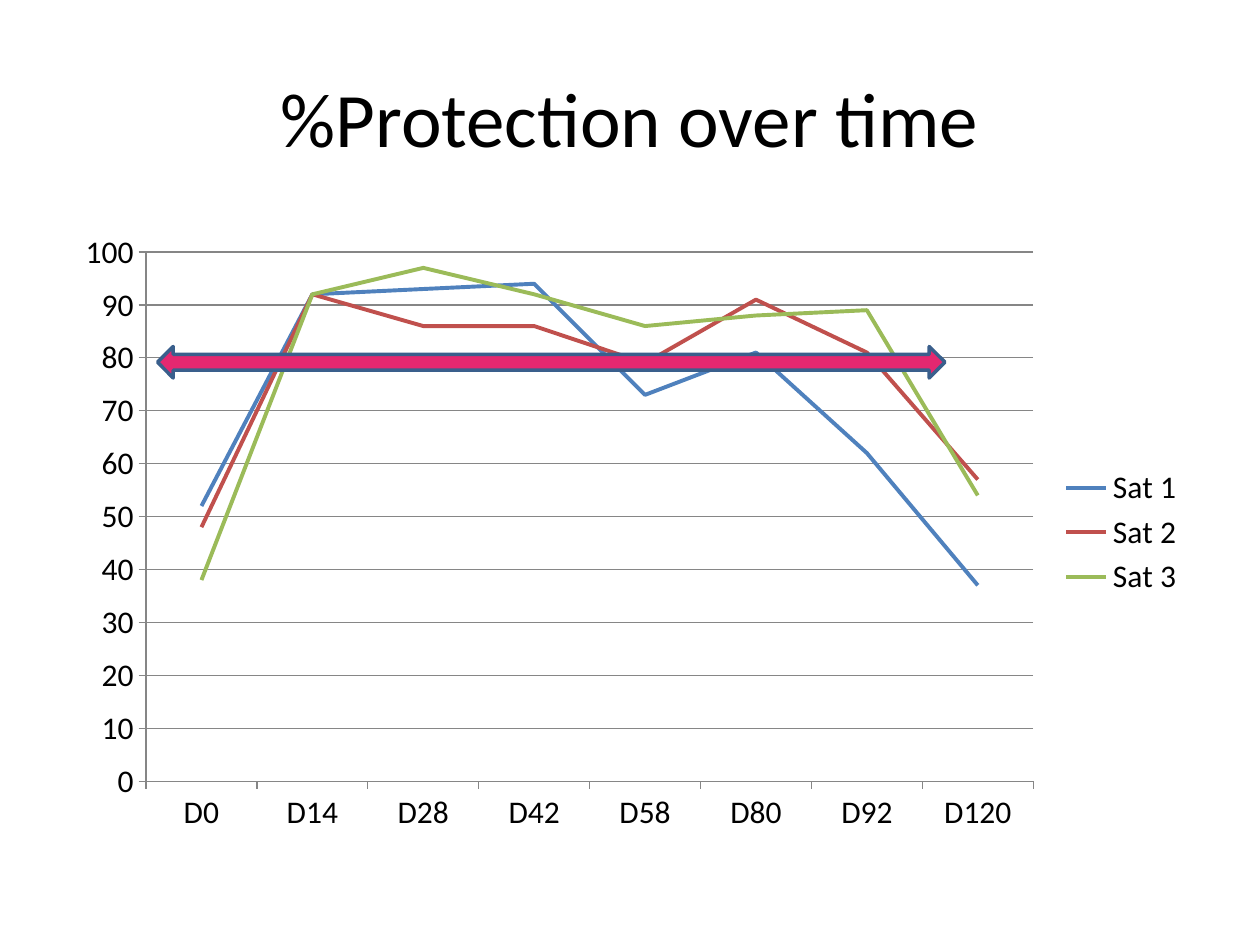
"""Build a slide with a line chart of protection over time and a threshold arrow."""
from dataclasses import dataclass

from pptx import Presentation
from pptx.chart.data import CategoryChartData
from pptx.dml.color import RGBColor
from pptx.enum.chart import XL_CHART_TYPE, XL_LEGEND_POSITION, XL_TICK_MARK
from pptx.enum.shapes import MSO_SHAPE
from pptx.enum.text import MSO_ANCHOR, PP_ALIGN
from pptx.util import Inches, Pt

LINE_CHART = XL_CHART_TYPE.LINE
LEGEND_RIGHT = XL_LEGEND_POSITION.RIGHT
TICK_OUTSIDE = XL_TICK_MARK.OUTSIDE
DOUBLE_ARROW = MSO_SHAPE.LEFT_RIGHT_ARROW
MIDDLE = MSO_ANCHOR.MIDDLE
CENTER = PP_ALIGN.CENTER


@dataclass(frozen=True)
class Theme:
    font: str = "Calibri"
    text: RGBColor = RGBColor.from_string("000000")
    axis: RGBColor = RGBColor.from_string("868686")
    arrow: RGBColor = RGBColor.from_string("E42870")
    arrow_line: RGBColor = RGBColor.from_string("3A5F8C")
    title_size: Pt = Pt(44)
    chart_size: Pt = Pt(18)


theme = Theme()


def set_font(font, size):
    font.name = theme.font
    font.size = size
    font.color.rgb = theme.text


prs = Presentation()
prs.slide_width = Inches(10)
prs.slide_height = Inches(7.5)
s = prs.slides.add_slide(prs.slide_layouts[5])

title = s.shapes.title
title.left, title.top = Inches(0.5), Inches(0.3)
title.width, title.height = Inches(9), Inches(1.25)
tf = title.text_frame
tf.vertical_anchor = MIDDLE
p = tf.paragraphs[0]
p.alignment = CENTER
r = p.add_run()
r.text = "%Protection over time"
set_font(r.font, theme.title_size)

days = ["D0", "D14", "D28", "D42", "D58", "D80", "D92", "D120"]
series = [
    ("Sat 1", [52, 92, 93, 94, 73, 81, 62, 37], "4F81BD"),
    ("Sat 2", [48, 92, 86, 86, 79, 91, 81, 57], "C0504D"),
    ("Sat 3", [38, 92, 97, 92, 86, 88, 89, 54], "9BBB59"),
]
data = CategoryChartData()
data.categories = days
for name, values, color in series:
    data.add_series(name, values)

chart = s.shapes.add_chart(
    LINE_CHART, Inches(0.5), Inches(1.75), Inches(9), Inches(4.95), data
).chart
chart.has_title = False
set_font(chart.font, theme.chart_size)
chart.has_legend = True
chart.legend.position = LEGEND_RIGHT
chart.legend.include_in_layout = False
set_font(chart.legend.font, theme.chart_size)

plot = chart.plots[0]
plot.vary_by_categories = False
for line, (name, values, color) in zip(plot.series, series):
    line.smooth = False
    line.format.line.width = Pt(2.25)
    line.format.line.color.rgb = RGBColor.from_string(color)

for axis in (chart.category_axis, chart.value_axis):
    axis.major_tick_mark = TICK_OUTSIDE
    axis.format.line.color.rgb = theme.axis
    set_font(axis.tick_labels.font, theme.chart_size)

value_axis = chart.value_axis
value_axis.minimum_scale = 0
value_axis.maximum_scale = 100
value_axis.major_unit = 10
value_axis.has_major_gridlines = True
value_axis.major_gridlines.format.line.color.rgb = theme.axis

arrow = s.shapes.add_shape(
    DOUBLE_ARROW, Inches(1.25), Inches(2.75), Inches(6.25), Inches(0.25)
)
arrow.shadow.inherit = False
arrow.fill.solid()
arrow.fill.fore_color.rgb = theme.arrow
arrow.line.color.rgb = theme.arrow_line
arrow.line.width = Pt(2)

prs.save("out.pptx")
